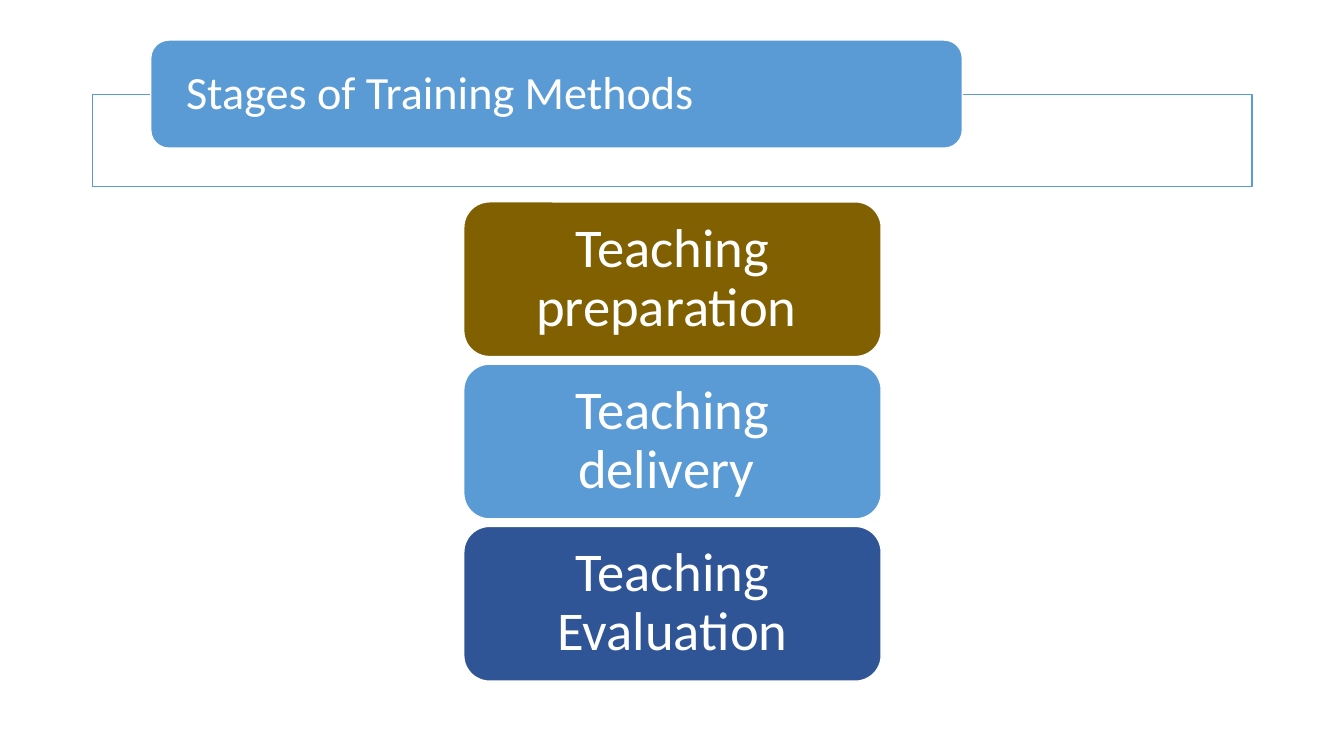
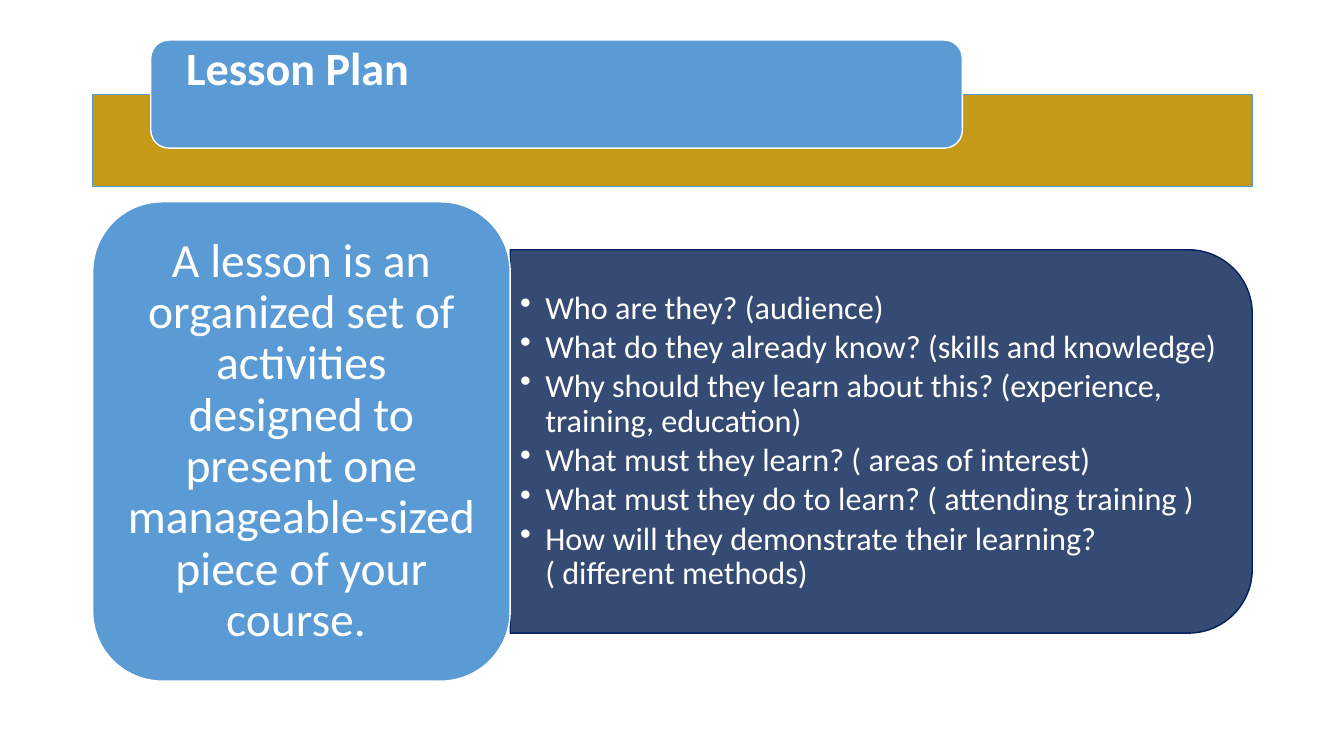
from lxml.etree import SubElement
from pptx import Presentation
from pptx.dml.color import RGBColor
from pptx.enum.shapes import MSO_SHAPE
from pptx.enum.text import MSO_ANCHOR, MSO_AUTO_SIZE, PP_ALIGN
from pptx.oxml.ns import qn
from pptx.util import Inches, Pt

COLORS = {
    "white": "FFFFFF",
    "blue": "5B9BD5",
    "gold": "BF9000",
    "brown": "806000",
    "royal": "2F5597",
    "navy": "203864",
    "midnight": "002060",
}
FONT = "Calibri"
TITLE_ONLY = 5


def color(name):
    return RGBColor.from_string(COLORS[name])


def write(box, paragraphs, size, bold=False, align=PP_ALIGN.CENTER,
          anchor=MSO_ANCHOR.MIDDLE, inset=(0.16, 0.08), after=0, bullet=False):
    frame = box.text_frame
    frame.word_wrap = True
    frame.auto_size = MSO_AUTO_SIZE.NONE
    frame.vertical_anchor = anchor
    frame.margin_left = frame.margin_right = Inches(inset[0])
    frame.margin_top = frame.margin_bottom = Inches(inset[1])
    for index, text in enumerate(paragraphs):
        para = frame.add_paragraph() if index else frame.paragraphs[0]
        para.alignment = align
        para.line_spacing = 0.9
        para.space_after = Pt(after)
        if bullet:
            properties = para._p.get_or_add_pPr()
            properties.set("marL", str(Inches(0.25)))
            properties.set("indent", str(-Inches(0.25)))
            SubElement(properties, qn("a:buChar")).set("char", "•")
        span = para.add_run()
        span.text = text
        span.font.name = FONT
        span.font.size = Pt(size)
        span.font.bold = bold
        span.font.color.rgb = color("white")


class Deck:
    WIDTH, HEIGHT = 13.33, 7.5
    MARGIN = 0.92
    COLUMN = 0.115
    ROW = 0.075
    TAB = (5, 5.3, 70, 14.3)
    BODY_TOP, BODY_ROWS = 26.7, 63.4

    def __init__(self):
        self.deck = Presentation()
        self.deck.slide_width = Inches(self.WIDTH)
        self.deck.slide_height = Inches(self.HEIGHT)
        self.page = None

    def place(self, column, row, columns, rows):
        return (Inches(self.MARGIN + column * self.COLUMN), Inches(row * self.ROW),
                Inches(columns * self.COLUMN), Inches(rows * self.ROW))

    def shape(self, kind, area, fill, line="white", alpha=None):
        box = self.page.shapes.add_shape(kind, *self.place(*area))
        box.shadow.inherit = False
        box.fill.solid()
        box.fill.fore_color.rgb = color(fill)
        box.line.color.rgb = color(line)
        box.line.width = Pt(1)
        if alpha:
            tint = box.fill._xPr.find(qn("a:solidFill")).find(qn("a:srgbClr"))
            SubElement(tint, qn("a:alpha")).set("val", str(alpha * 1000))
        return box

    def card(self, area, fill, text, size, **style):
        card = self.shape(MSO_SHAPE.ROUNDED_RECTANGLE, area, fill)
        write(card, [text], size, **style)

    def slide(self, title, band, **style):
        self.page = self.deck.slides.add_slide(self.deck.slide_layouts[TITLE_ONLY])
        self.shape(MSO_SHAPE.RECTANGLE, (0, 12.5, 100, 12.2), band, "blue", alpha=90)
        self.shape(MSO_SHAPE.ROUNDED_RECTANGLE, self.TAB, "blue")
        heading = self.page.shapes.title
        heading.left, heading.top, heading.width, heading.height = self.place(*self.TAB)
        write(heading, [title], 33, align=PP_ALIGN.LEFT, inset=(0.35, 0.05), **style)
        heading.element.getparent().append(heading.element)

    def stack(self, stages, column, columns, gap):
        rows = (self.BODY_ROWS - gap * (len(stages) - 1)) / len(stages)
        for index, (text, fill) in enumerate(stages):
            top = self.BODY_TOP + index * (rows + gap)
            self.card((column, top, columns, rows), fill, text, 39)

    def panel(self, column, columns, share, questions):
        rows = self.BODY_ROWS * share
        top = self.BODY_TOP + (self.BODY_ROWS - rows) / 2
        panel = self.shape(MSO_SHAPE.ROUND_2_SAME_RECTANGLE, (column, top, columns, rows),
                           "navy", "midnight", alpha=90)
        center_x, center_y = panel.left + panel.width // 2, panel.top + panel.height // 2
        panel.width, panel.height = panel.height, panel.width
        panel.left, panel.top = center_x - panel.width // 2, center_y - panel.height // 2
        panel.rotation = 90
        area = self.place(column, top, columns - 1.6, rows)
        box = self.page.shapes.add_textbox(*area)
        write(box, questions, 23, align=PP_ALIGN.LEFT, inset=(0.1, 0.05),
              after=3.2, bullet=True)

    def save(self):
        self.deck.save("out.pptx")


def main():
    deck = Deck()

    deck.slide("Stages of Training Methods", "white")
    deck.stack([
        ("Teaching preparation ", "brown"),
        ("Teaching delivery ", "blue"),
        ("Teaching Evaluation", "royal"),
    ], column=32, columns=36, gap=1)

    deck.slide("Lesson Plan", "gold", bold=True, anchor=MSO_ANCHOR.TOP)
    deck.panel(36, 64, 0.8, [
        "Who are they? (audience)",
        "What do they already know? (skills and knowledge)",
        "Why should they learn about this? (experience, training, education)",
        "What must they learn? ( areas of interest)",
        "What must they do to learn? ( attending training )",
        "How will they demonstrate their learning? ( different methods)",
    ])
    deck.card((0, deck.BODY_TOP, 36, deck.BODY_ROWS), "blue",
              "A lesson is an organized set of activities designed to present one "
              "manageable-sized piece of your course. ", 34, inset=(0.14, 0.07))

    deck.save()


if __name__ == "__main__":
    main()
